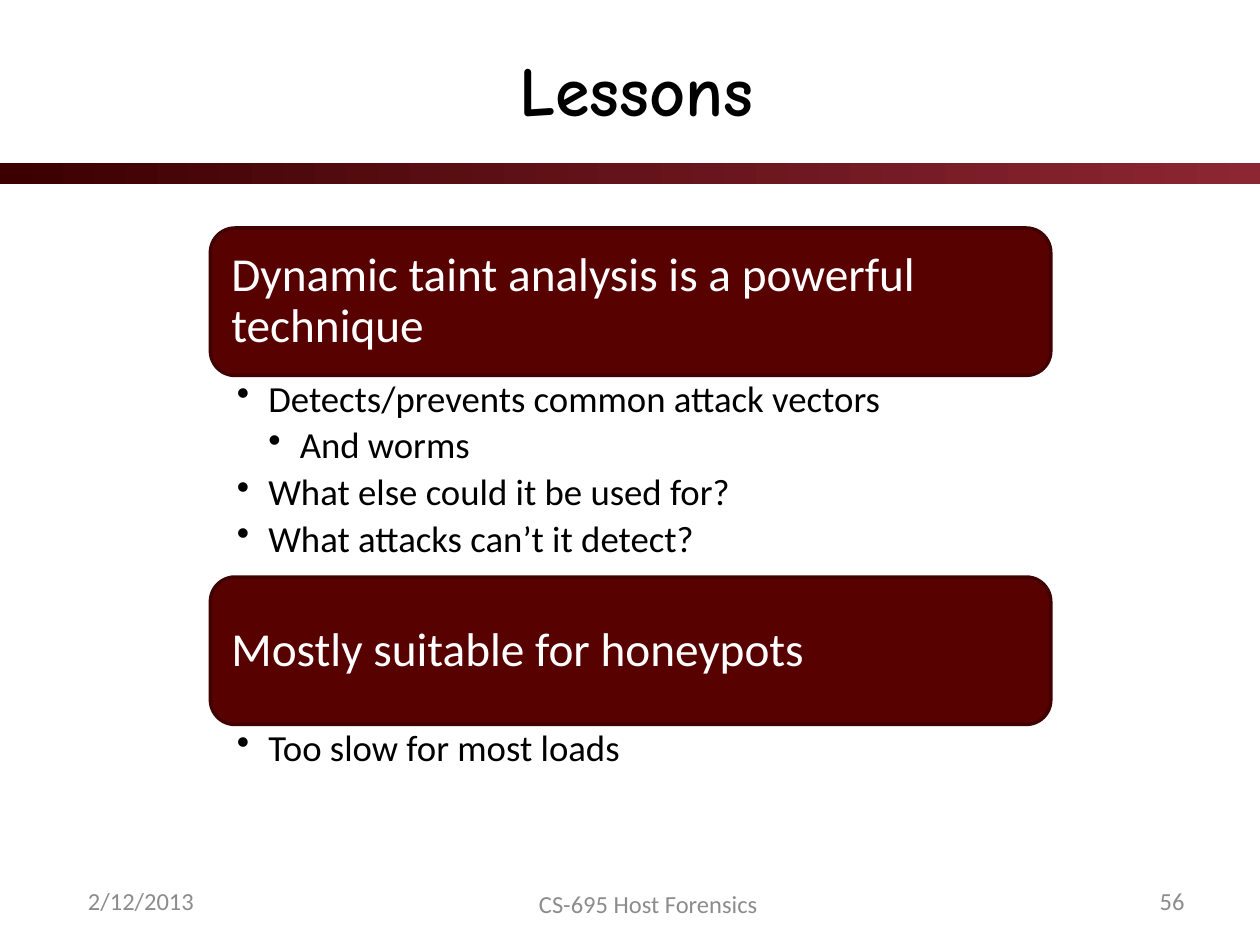
from dataclasses import dataclass

from lxml.etree import SubElement
from pptx import Presentation
from pptx.dml.color import RGBColor
from pptx.enum.shapes import MSO_SHAPE
from pptx.enum.text import MSO_ANCHOR, PP_ALIGN
from pptx.oxml.ns import qn
from pptx.shapes.autoshape import Shape
from pptx.slide import Slide
from pptx.text.text import TextFrame, _Paragraph
from pptx.util import Inches, Pt

COLOURS = {
    "bar_dark": "3C0000",
    "bar_light": "8C2633",
    "box": "580101",
    "box_line": "410101",
    "text": "000000",
    "box_text": "FFFFFF",
    "footer": "8C8C8C",
}
LESSON_LEFT, LESSON_WIDTH, HEADING_HEIGHT = 1.67, 6.67, 1.17
BULLET_INDENT = 0.25


@dataclass
class Bullet:
    text: str
    level: int = 1


@dataclass
class Lesson:
    top: float
    heading: str
    bullets_height: float
    bullets: list[Bullet]


@dataclass
class Label:
    text: str
    left: float
    top: float
    width: float
    height: float
    alignment: PP_ALIGN
    size: int = 14
    font: str = "Calibri"
    colour: str = "footer"
    bold: bool = False


LESSONS = [
    Lesson(1.81, "Dynamic taint analysis is a powerful technique", 1.59, [
        Bullet("Detects/prevents common attack vectors"),
        Bullet("And worms", level=2),
        Bullet("What else could it be used for?"),
        Bullet("What attacks can’t it detect?"),
    ]),
    Lesson(4.58, "Mostly suitable for honeypots", 0.49, [
        Bullet("Too slow for most loads"),
    ]),
]
LABELS = [
    Label("Lessons", 0.6, 0.15, 8.9, 1.1, PP_ALIGN.CENTER, 40, "Comic Neue", "text", True),
    Label("2/12/2013", 0.6, 6.95, 1.83, 0.4, PP_ALIGN.LEFT),
    Label("CS-695 Host Forensics", 3.9, 6.97, 2.49, 0.4, PP_ALIGN.CENTER),
    Label("56", 7.67, 6.95, 1.83, 0.4, PP_ALIGN.RIGHT),
]


def colour_of(name: str) -> RGBColor:
    return RGBColor.from_string(COLOURS[name])


def style_paragraph(paragraph: _Paragraph, size: int, colour: str,
                    font: str = "Calibri", bold: bool = False) -> None:
    paragraph.font.size = Pt(size)
    paragraph.font.name = font
    paragraph.font.bold = bold
    paragraph.font.color.rgb = colour_of(colour)


def set_margins(frame: TextFrame, horizontal: float, vertical: float) -> None:
    frame.word_wrap = True
    frame.margin_left = frame.margin_right = Inches(horizontal)
    frame.margin_top = frame.margin_bottom = Inches(vertical)


def add_bullet_mark(paragraph: _Paragraph, level: int) -> None:
    """Give the paragraph a round bullet and a hanging indent for its level."""
    properties = paragraph._p.get_or_add_pPr()
    properties.set("marL", str(Inches(BULLET_INDENT * level)))
    properties.set("indent", str(-Inches(BULLET_INDENT)))
    SubElement(properties, qn("a:buChar")).set("char", "•")


def add_bar(slide: Slide) -> None:
    bar = slide.shapes.add_shape(
        MSO_SHAPE.RECTANGLE, 0, Inches(1.29), Inches(10), Inches(0.17))
    bar.shadow.inherit = False
    bar.line.fill.background()
    bar.fill.gradient()
    bar.fill.gradient_angle = 0
    for stop, name in zip(bar.fill.gradient_stops, ("bar_dark", "bar_light")):
        stop.color.rgb = colour_of(name)


def add_label(slide: Slide, label: Label) -> None:
    box = slide.shapes.add_textbox(
        Inches(label.left), Inches(label.top), Inches(label.width), Inches(label.height))
    frame = box.text_frame
    frame.word_wrap = True
    frame.vertical_anchor = MSO_ANCHOR.MIDDLE
    paragraph = frame.paragraphs[0]
    paragraph.text = label.text
    paragraph.alignment = label.alignment
    style_paragraph(paragraph, label.size, label.colour, label.font, label.bold)


def add_heading(slide: Slide, lesson: Lesson) -> Shape:
    heading = slide.shapes.add_shape(
        MSO_SHAPE.ROUNDED_RECTANGLE, Inches(LESSON_LEFT), Inches(lesson.top),
        Inches(LESSON_WIDTH), Inches(HEADING_HEIGHT))
    heading.shadow.inherit = False
    heading.fill.solid()
    heading.fill.fore_color.rgb = colour_of("box")
    heading.line.color.rgb = colour_of("box_line")
    heading.line.width = Pt(2)
    frame = heading.text_frame
    set_margins(frame, 0.11, 0.11)
    frame.vertical_anchor = MSO_ANCHOR.MIDDLE
    paragraph = frame.paragraphs[0]
    paragraph.text = lesson.heading
    paragraph.alignment = PP_ALIGN.LEFT
    paragraph.line_spacing = 0.9
    style_paragraph(paragraph, 27, "box_text")
    return heading


def add_lesson(slide: Slide, lesson: Lesson) -> None:
    heading = add_heading(slide, lesson)
    box = slide.shapes.add_textbox(
        heading.left, heading.top + heading.height, heading.width,
        Inches(lesson.bullets_height))
    frame = box.text_frame
    set_margins(frame, 0.21, 0.04)
    for index, bullet in enumerate(lesson.bullets):
        paragraph = frame.add_paragraph() if index else frame.paragraphs[0]
        paragraph.text = bullet.text
        paragraph.level = bullet.level
        add_bullet_mark(paragraph, bullet.level)
        paragraph.line_spacing = 0.9
        paragraph.space_after = Pt(4)
        style_paragraph(paragraph, 21, "text")


def main() -> None:
    presentation = Presentation()
    presentation.slide_width = Inches(10)
    presentation.slide_height = Inches(7.5)
    slide = presentation.slides.add_slide(presentation.slide_layouts[6])
    add_bar(slide)
    for lesson in LESSONS:
        add_lesson(slide, lesson)
    for label in LABELS:
        add_label(slide, label)
    presentation.save("out.pptx")


if __name__ == "__main__":
    main()
